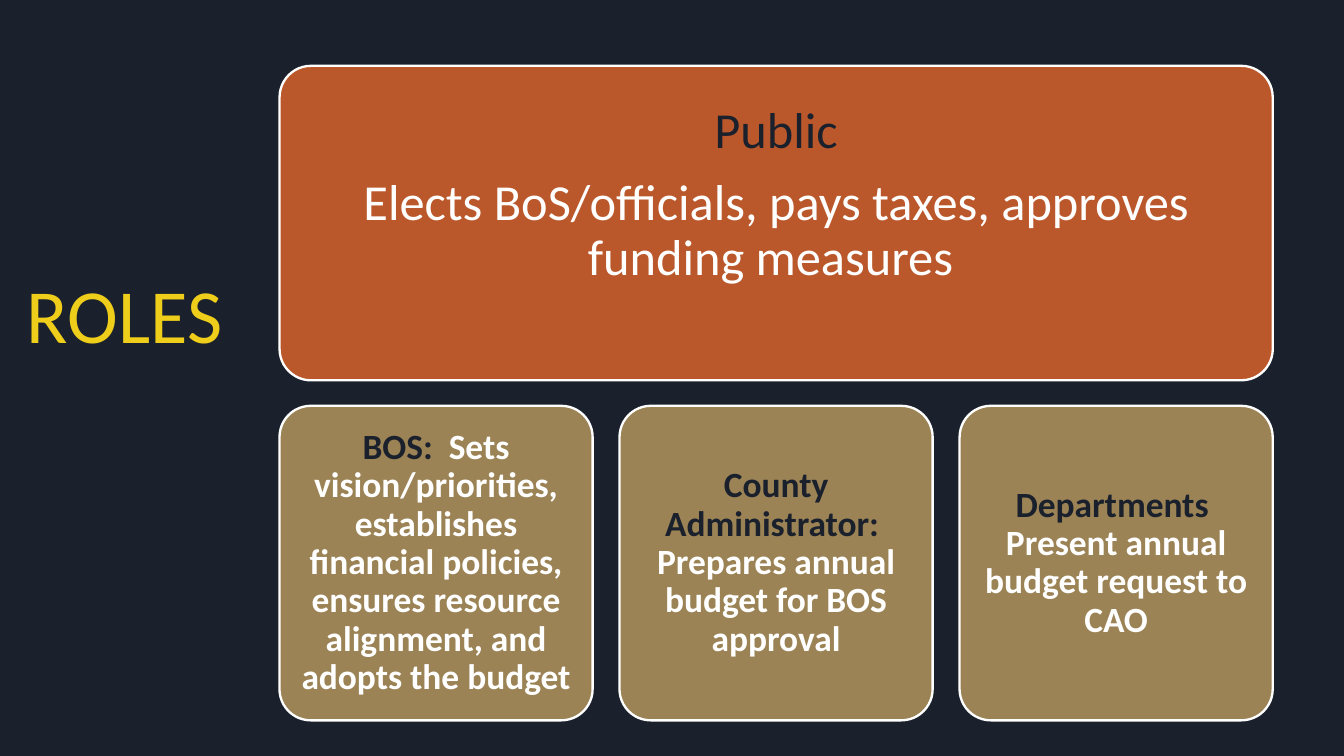
from pptx import Presentation
from pptx.dml.color import RGBColor
from pptx.enum.shapes import MSO_SHAPE
from pptx.enum.text import MSO_ANCHOR, PP_ALIGN
from pptx.util import Inches, Pt

ROUND = MSO_SHAPE.ROUNDED_RECTANGLE
TOP, MIDDLE = MSO_ANCHOR.TOP, MSO_ANCHOR.MIDDLE
LEFT, CENTER = PP_ALIGN.LEFT, PP_ALIGN.CENTER
HEX = {"dark": "1B212C", "gold": "EECE1A", "rust": "BB582B",
       "tan": "9B8355", "white": "FFFFFF"}
DUTIES = [
    ("BOS:", "  Sets vision/priorities, establishes financial policies, "
             "ensures resource alignment, and adopts the budget"),
    ("County Administrator:  ", "Prepares annual budget for BOS approval"),
    ("Departments", "  Present annual budget request to CAO"),
]


def color(name):
    """Return the named colour."""
    return RGBColor.from_string(HEX[name])


def style(item, values):
    """Set each attribute of an item from a dict."""
    for key, value in values.items():
        setattr(item, key, value)


def write(para, text, tint, size, bold=False):
    """Add one formatted run to a paragraph."""
    run = para.add_run()
    run.text = text
    style(run.font, {"name": "Calibri", "size": Pt(size), "bold": bold})
    run.font.color.rgb = color(tint)


def add_title(slide, box):
    """Place the slide title in its box."""
    title = slide.shapes.title
    style(title, dict(zip(("left", "top", "width", "height"),
                          map(Inches, box))))
    frame = title.text_frame
    style(frame, {"vertical_anchor": TOP, "word_wrap": True,
                  "margin_left": Inches(0.07), "margin_right": Inches(0.07),
                  "margin_top": Inches(0.04), "margin_bottom": Inches(0.04)})
    para = frame.paragraphs[0]
    para.alignment = LEFT
    write(para, "ROLES", "gold", 41)


def add_card(slide, box, fill, pad, paras, size, bold=False, lift=0):
    """Draw a rounded card whose paragraphs are lists of (text, tint)."""
    card = slide.shapes.add_shape(ROUND, *map(Inches, box))
    card.adjustments[0] = 0.1
    card.shadow.inherit = False
    card.fill.solid()
    card.fill.fore_color.rgb = color(fill)
    card.line.color.rgb = color("white")
    card.line.width = Pt(1.25)
    frame = card.text_frame
    style(frame, {"vertical_anchor": MIDDLE, "word_wrap": True,
                  "margin_left": Inches(pad), "margin_right": Inches(pad),
                  "margin_top": Inches(pad),
                  "margin_bottom": Inches(pad + lift)})
    for num, runs in enumerate(paras):
        para = frame.add_paragraph() if num else frame.paragraphs[0]
        style(para, {"alignment": CENTER, "line_spacing": 0.9,
                     "space_before": Pt(9.5 if num else 0)})
        for text, tint in runs:
            write(para, text, tint, size, bold)


def add_roles(slide, box):
    """Place the public card above an even row of duty cards."""
    left, top, width, height = box
    gap, drop = 0.2, 0.19
    tall = (height - drop) / 2
    wide = (width - gap * (len(DUTIES) - 1)) / len(DUTIES)
    public = [[("Public", "dark")],
              [("Elects BoS/officials, pays taxes, approves funding measures ",
                "white")]]
    add_card(slide, (left, top, width, tall), "rust", 0.11, public, 27,
             lift=0.41)
    for num, (role, duty) in enumerate(DUTIES):
        spot = (left + num * (wide + gap), top + tall + drop, wide, tall)
        add_card(slide, spot, "tan", 0.08,
                 [[(role, "dark"), (duty, "white")]], 19, bold=True)


def main():
    """Build and save the deck."""
    deck = Presentation()
    style(deck, {"slide_width": Inches(10),
                 "slide_height": Inches(10 * 9 / 16)})
    slide = deck.slides.add_slide(deck.slide_layouts[5])
    back = slide.background.fill
    back.solid()
    back.fore_color.rgb = color("dark")
    add_title(slide, (0.13, 1.95, 1.82, 0.77))
    add_roles(slide, (2.08, 0.49, 7.39, 4.87))
    deck.save("out.pptx")


if __name__ == "__main__":
    main()
